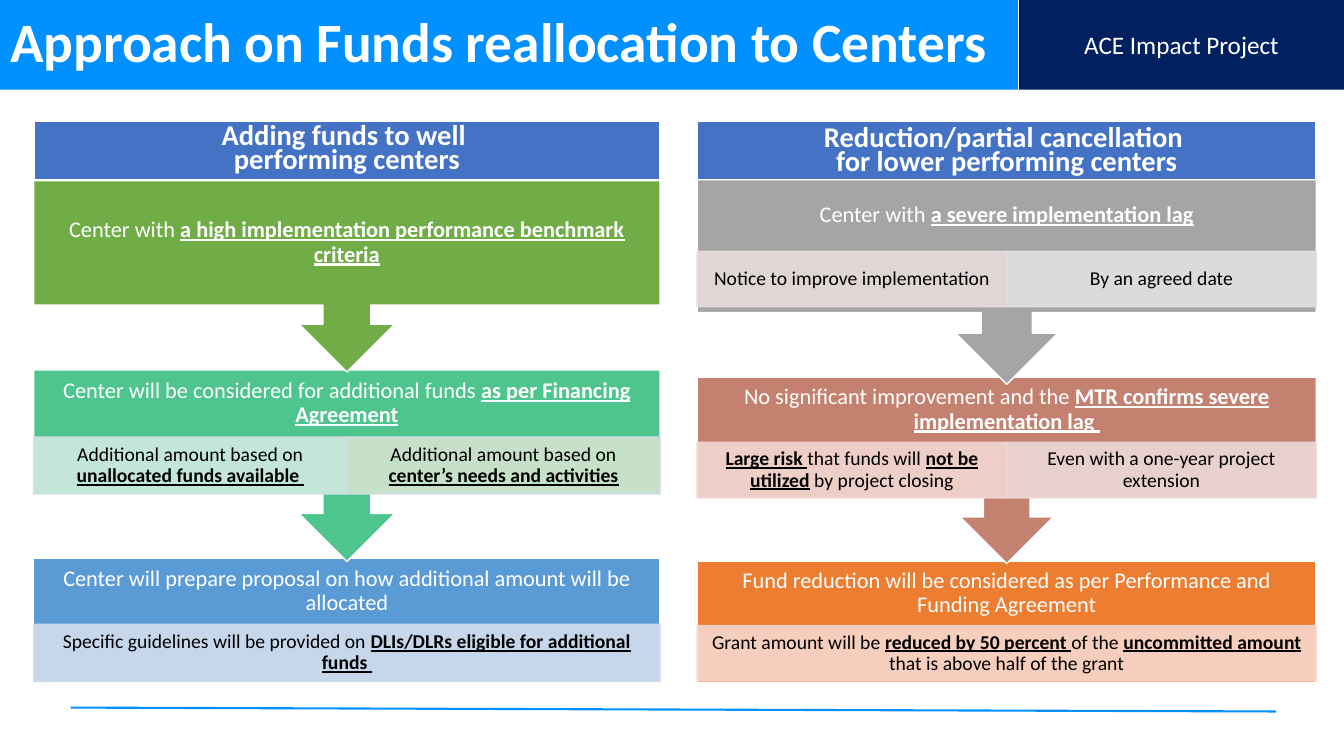
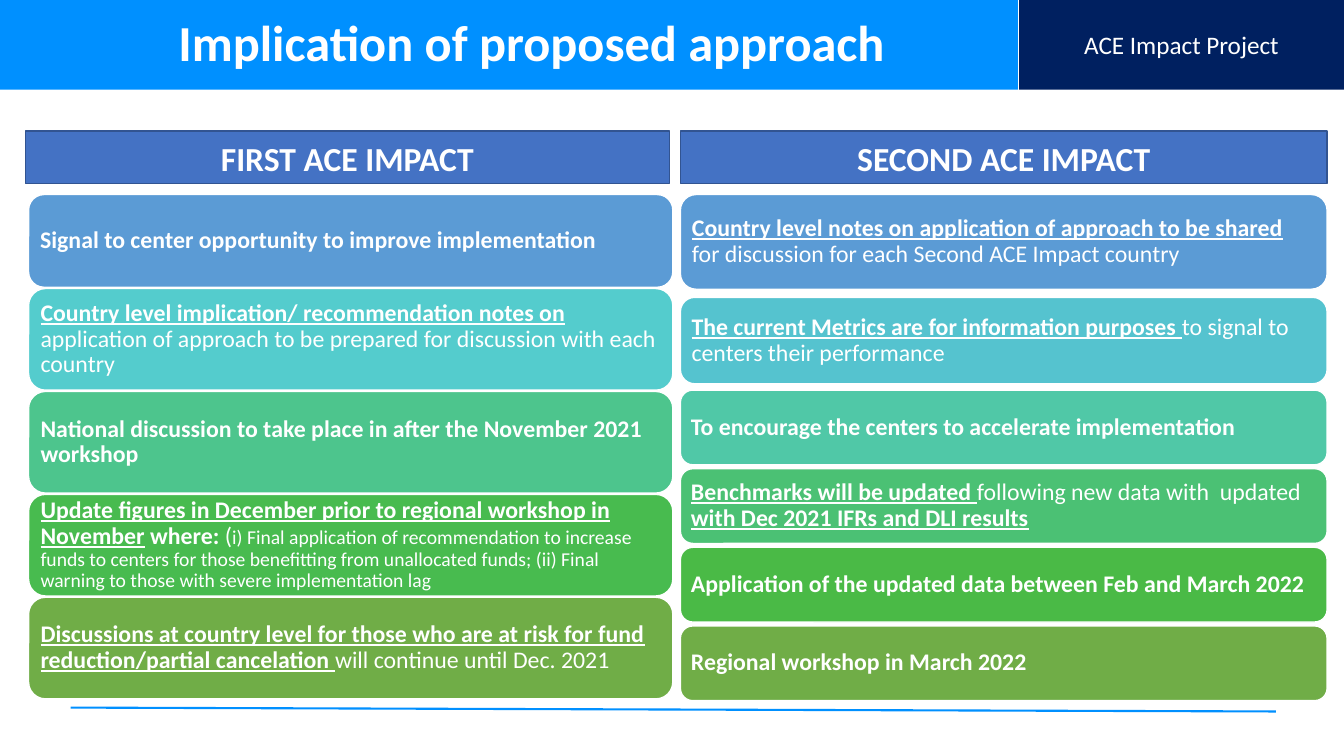
from lxml.etree import SubElement
from pptx import Presentation
from pptx.dml.color import RGBColor
from pptx.enum.shapes import MSO_CONNECTOR as Connector, MSO_SHAPE as Preset
from pptx.enum.text import MSO_ANCHOR as Anchor, MSO_AUTO_SIZE as AutoSize, PP_ALIGN as Align
from pptx.oxml.ns import qn
from pptx.util import Inches, Pt

COLORS = {
    "white": "FFFFFF", "black": "000000", "band": "0090FF", "navy": "002060",
    "header": "4472C4", "header_edge": "325491", "blue": "5B9BD5",
    "turquoise": "54CCCD", "aqua": "55C3CF", "teal": "50C8A7", "mint": "4DC58D",
    "jade": "4BC174", "emerald": "48BB4F", "grass": "4ABA46", "green": "70AD47",
    "gray": "A5A5A5", "clay": "C48170", "orange": "ED7D31",
    "pale_blue": "D2DEEF", "pale_mint": "D0EAE1", "pale_green": "D5E3CF",
    "pale_rose": "E7DCDC", "pale_gray": "E1E1E1", "pale_clay": "F2D8D2",
    "pale_brick": "EDD9D7", "pale_orange": "F8D7CE",
}
PLAIN, BOLD, STRONG, SMALL = "plain", "bold", "strong", "small"
COLUMNS, ROWS = 160, 90


class Deck:
    font_name = "Calibri"
    small_size = 14

    def __init__(self):
        self.presentation = Presentation()
        self.presentation.slide_width = Inches(40 / 3)
        self.presentation.slide_height = Inches(7.5)
        self.column = self.presentation.slide_width / COLUMNS
        self.row = self.presentation.slide_height / ROWS
        self.slide = None

    def place(self, left, top, width, height):
        return (round(left * self.column), round(top * self.row),
                round(width * self.column), round(height * self.row))

    def rgb(self, name):
        return RGBColor.from_string(COLORS[name])

    def new_slide(self, title, size, width, align):
        self.slide = self.presentation.slides.add_slide(self.presentation.slide_layouts[5])
        self.rule(8.4, 84.24, 151.9, 84.7)
        self.box((0, 0, 121.2, 10.68), "band")
        tag = self.box((121.32, 0, 38.68, 10.68), "navy")
        self.set_text(tag, [[("ACE Impact Project", PLAIN)]], 18, spacing=1)
        holder = self.slide.shapes.title
        self.slide.shapes._spTree.append(holder._element)
        holder.left, holder.top, holder.width, holder.height = self.place(0, 0, width, 10.7)
        self.set_text(holder, [[(title, BOLD)]], size, align=align)

    def rule(self, left, top, right, bottom):
        start_x, start_y, end_x, end_y = self.place(left, top, right, bottom)
        line = self.slide.shapes.add_connector(Connector.STRAIGHT, start_x, start_y, end_x, end_y)
        line.line.color.rgb = self.rgb("band")
        line.line.width = Pt(1.5)
        SubElement(line._element.spPr, qn("a:effectLst"))

    def box(self, area, fill, edge=None, edge_width=1, preset=Preset.RECTANGLE, opacity=100):
        shape = self.slide.shapes.add_shape(preset, *self.place(*area))
        shape.shadow.inherit = False
        shape.fill.solid()
        shape.fill.fore_color.rgb = self.rgb(fill)
        if edge:
            shape.line.color.rgb = self.rgb(edge)
            shape.line.width = Pt(edge_width)
        else:
            shape.line.fill.background()
        if opacity < 100:
            for color in shape._element.spPr.iter(qn("a:srgbClr")):
                SubElement(color, qn("a:alpha")).set("val", str(opacity * 1000))
        return shape

    def set_text(self, shape, lines, size, color="white", align=Align.CENTER,
                 anchor=Anchor.MIDDLE, spacing=0.9, insets=(7.2, 3.6), reserve=0):
        frame = shape.text_frame
        frame.word_wrap = True
        frame.auto_size = AutoSize.NONE
        frame.vertical_anchor = anchor
        frame.margin_left = frame.margin_right = Pt(insets[0])
        frame.margin_top = Pt(insets[1])
        frame.margin_bottom = Pt(insets[1]) + round(reserve * self.row)
        for index, runs in enumerate(lines):
            paragraph = frame.add_paragraph() if index else frame.paragraphs[0]
            paragraph.alignment = align
            paragraph.line_spacing = spacing
            paragraph.space_before = paragraph.space_after = Pt(0)
            for text, style in runs:
                run = paragraph.add_run()
                run.text = text
                run.font.name = self.font_name
                run.font.size = Pt(self.small_size if style == SMALL else size)
                run.font.bold = style in (BOLD, STRONG)
                run.font.underline = style == STRONG
                run.font.color.rgb = self.rgb(color)

    def header(self, area, lines, size, edge, edge_width, spacing):
        shape = self.box(area, "header", edge, edge_width)
        self.set_text(shape, [[(line, BOLD)] for line in lines], size,
                      anchor=Anchor.BOTTOM, spacing=spacing)

    def stage(self, area, fill, runs, details, detail_height, detail_edge, is_last):
        left, top, width, height = area
        preset = Preset.RECTANGLE if is_last else Preset.DOWN_ARROW_CALLOUT
        body_share, text_share = (1, 0.53) if is_last else (0.65, 0.35)
        reserve = (body_share - text_share) * height if details else 0
        shape = self.box(area, fill, "white", preset=preset)
        self.set_text(shape, [runs], 16, insets=(9, 9), reserve=reserve)
        for index, (detail_fill, detail_runs) in enumerate(details):
            detail_width = width / len(details)
            detail = self.box((left + index * detail_width, top + text_share * height,
                               detail_width, detail_height),
                              detail_fill, detail_edge or detail_fill, opacity=90)
            self.set_text(detail, [detail_runs], self.small_size, "black", insets=(8, 1.5))

    def flow(self, left, width, stages, detail_height, detail_edge=None):
        for index, (top, height, fill, runs, details) in reversed(list(enumerate(stages))):
            self.stage((left, top, width, height), fill, runs, details,
                       detail_height, detail_edge, index == len(stages) - 1)

    def cards(self, left, width, tops, heights, contents):
        for top, height, (fill, runs) in zip(tops, heights, contents):
            card = self.box((left, top, width, height), fill, "white",
                            preset=Preset.ROUNDED_RECTANGLE)
            self.set_text(card, [runs], 17, align=Align.LEFT, insets=(5, 5))


ADDING_STAGES = [
    (21.5, 22.8, "green", [
        ("Center with ", PLAIN),
        ("a high implementation performance benchmark criteria", STRONG)], []),
    (44.04, 22.8, "mint", [
        ("Center will be considered for additional funds ", PLAIN),
        ("as per Financing Agreement", STRONG)], [
        ("pale_mint", [("Additional amount based on ", PLAIN),
                       ("unallocated funds available ", STRONG)]),
        ("pale_green", [("Additional amount based on ", PLAIN),
                        ("center’s needs and activities", STRONG)])]),
    (66.5, 14.76, "blue", [
        ("Center will prepare proposal on how additional amount will be allocated", PLAIN)], [
        ("pale_blue", [("Specific guidelines will be provided on ", PLAIN),
                       ("DLIs/DLRs eligible for additional funds ", STRONG)])]),
]
REDUCTION_STAGES = [
    (21.4, 24.36, "gray", [
        ("Center with ", PLAIN), ("a severe implementation lag", STRONG)], [
        ("pale_rose", [("Notice to improve implementation", PLAIN)]),
        ("pale_gray", [("By an agreed date", PLAIN)])]),
    (44.9, 22.2, "clay", [
        ("No significant improvement and the ", PLAIN),
        ("MTR confirms severe implementation lag ", STRONG)], [
        ("pale_clay", [("Large risk ", STRONG), ("that funds will ", PLAIN),
                       ("not be utilized", STRONG), (" by project closing", PLAIN)]),
        ("pale_brick", [("Even with a one-year project extension", PLAIN)])]),
    (66.84, 14.4, "orange", [
        ("Fund reduction will be considered as per Performance and Funding Agreement", PLAIN)], [
        ("pale_orange", [("Grant amount will be ", PLAIN), ("reduced by 50 percent ", STRONG),
                         ("of the ", PLAIN), ("uncommitted amount ", STRONG),
                         ("that is above half of the grant", PLAIN)])]),
]
FIRST_CARDS = [
    ("blue", [("Signal to center opportunity to improve implementation", BOLD)]),
    ("turquoise", [
        ("Country level implication/ recommendation notes on ", STRONG),
        ("application of approach to be prepared for discussion with each country", PLAIN)]),
    ("mint", [("National discussion to take place in after the November 2021 workshop", BOLD)]),
    ("emerald", [
        ("Update figures in December prior to regional workshop in November", STRONG),
        (" where: ", BOLD), ("(", PLAIN),
        ("i) Final application of recommendation to increase funds to centers for those "
         "benefitting from unallocated funds; (ii) Final warning to those with severe "
         "implementation lag", SMALL)]),
    ("green", [
        ("Discussions at country level for those who are at risk for fund "
         "reduction/partial cancelation ", STRONG),
        ("will continue until Dec. 2021", PLAIN)]),
]
SECOND_CARDS = [
    ("blue", [("Country level notes on application of approach to be shared ", STRONG),
              ("for discussion for each Second ACE Impact country", PLAIN)]),
    ("aqua", [("The current Metrics are for information purposes ", STRONG),
              ("to signal to centers their performance", PLAIN)]),
    ("teal", [("To encourage the centers to accelerate implementation", BOLD)]),
    ("jade", [("Benchmarks will be updated ", STRONG),
              ("following new data with  updated ", PLAIN),
              ("with Dec 2021 IFRs and DLI results", STRONG)]),
    ("grass", [("Application of the updated data between Feb and March 2022", BOLD)]),
    ("green", [("Regional workshop in March 2022", BOLD)]),
]


def add_approach(deck):
    deck.new_slide("Approach on Funds reallocation to Centers", 39.6, 121.2, Align.LEFT)
    deck.header((4, 14.4, 74.6, 7), ["Adding funds to well ", "performing centers"],
                20.4, "white", 1.5, 0.7)
    deck.header((83, 14.4, 73.7, 7.2),
                ["Reduction/partial cancellation ", "for lower performing centers"],
                20.4, "white", 1.5, 0.7)
    deck.flow(4, 74.6, ADDING_STAGES, 6.8, "pale_blue")
    deck.flow(83, 73.7, REDUCTION_STAGES, 6.6)


def add_implication(deck):
    deck.new_slide("Implication of proposed approach ", 36, 128, Align.CENTER)
    deck.header((3, 15.6, 76.7, 6.24), ["FIRST ACE IMPACT"], 24, "header_edge", 1, 0.9)
    deck.header((81, 15.6, 77, 6.24), ["SECOND ACE IMPACT"], 24, "header_edge", 1, 0.9)
    deck.cards(3.4, 76.7, [23.16] + [34.35 + 12.25 * step for step in range(4)],
               [11.04] + [12.1] * 4, FIRST_CARDS)
    deck.cards(81, 77, [23.16, 35.4] + [46.44 + 9.36 * step for step in range(4)],
               [11.28, 10.3] + [8.9] * 4, SECOND_CARDS)


def main():
    deck = Deck()
    add_approach(deck)
    add_implication(deck)
    deck.presentation.save("out.pptx")


if __name__ == "__main__":
    main()
